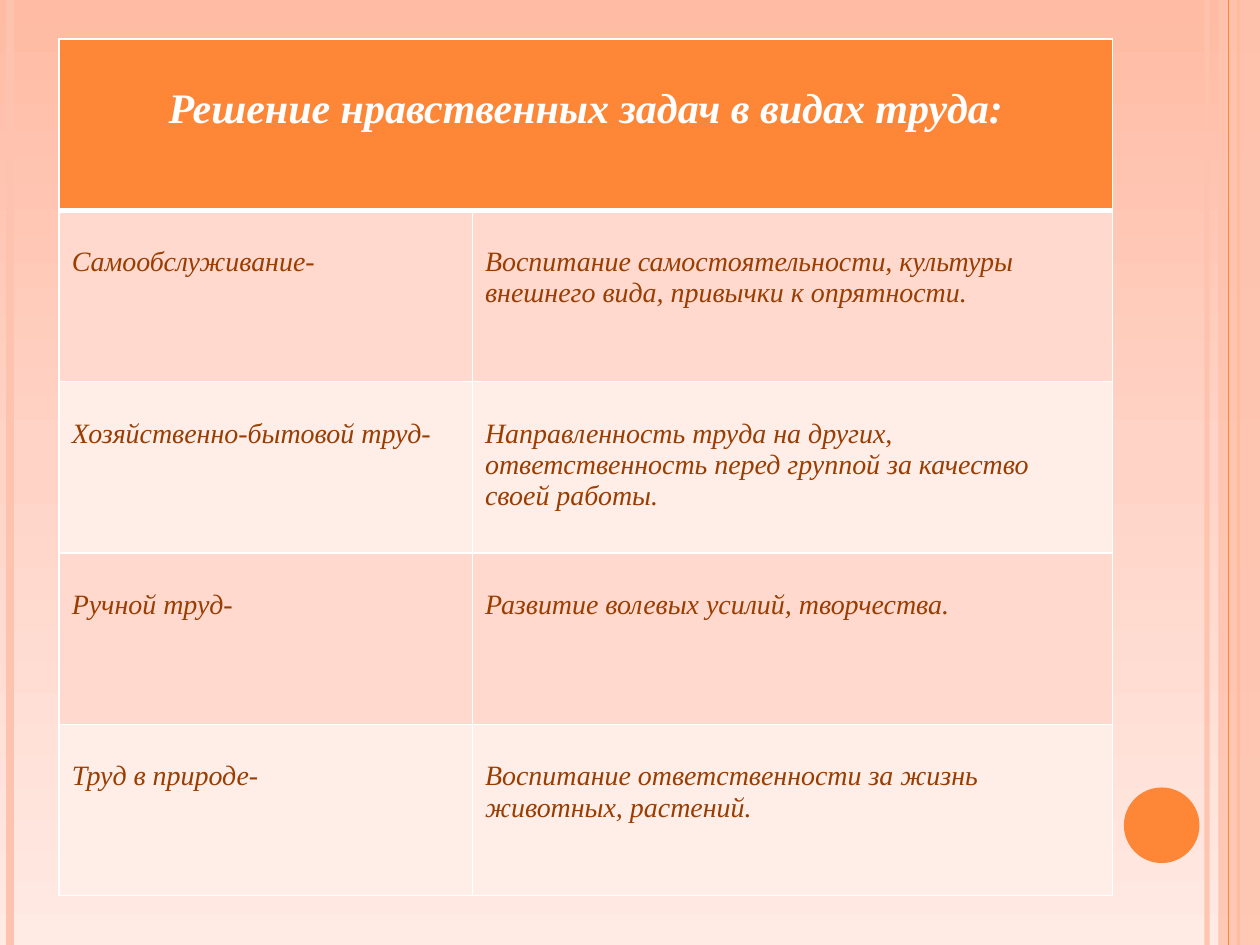
from copy import deepcopy

from lxml import etree
from pptx import Presentation
from pptx.dml.color import RGBColor
from pptx.enum import shapes, text
from pptx.oxml import ns
from pptx.util import Inches, Pt

ORANGE = RGBColor(0xFE, 0x86, 0x37)
PEACH = RGBColor(0xFE, 0xC3, 0xAE)
WHITE = RGBColor(0xFF, 0xFF, 0xFF)
BROWN = RGBColor(0x9A, 0x3D, 0x01)
ROW_FILLS = (RGBColor(0xFF, 0xD9, 0xCE), RGBColor(0xFF, 0xED, 0xE8))
SKY_TOP = RGBColor(0xFF, 0xBB, 0xA3)
SKY_MIDDLE = RGBColor(0xFF, 0xD4, 0xC7)
SKY_BOTTOM = RGBColor(0xFF, 0xEA, 0xE4)
FONT = "Times New Roman"

TITLE = "Решение нравственных задач в видах труда:"
LABOUR_TASKS = (
    ("Самообслуживание-",
     "Воспитание самостоятельности, культуры внешнего вида, привычки к опрятности."),
    ("Хозяйственно-бытовой труд-",
     "Направленность труда на других, ответственность перед группой за качество своей работы."),
    ("Ручной труд-", "Развитие волевых усилий, творчества."),
    ("Труд в природе-", "Воспитание ответственности за жизнь животных, растений."),
)


def set_alpha(element, percent):
    """Make the solid colour inside an element partly transparent."""
    color = element.find(".//" + ns.qn("a:srgbClr"))
    etree.SubElement(color, ns.qn("a:alpha"), val=str(percent * 1000))


def paint_background(slide):
    """Fill the slide with a three-stop vertical gradient."""
    fill = slide.background.fill
    fill.gradient()
    fill.gradient_angle = 270
    first, last = fill.gradient_stops
    first.color.rgb, last.color.rgb = SKY_MIDDLE, SKY_BOTTOM
    stops = slide.element.find(".//" + ns.qn("a:gsLst"))
    middle = deepcopy(stops[0])
    middle.set("pos", "50000")
    stops.insert(1, middle)
    first.color.rgb = SKY_TOP


def add_stripe(slide, x, height, color, width, alpha=None):
    """Draw a vertical line from the top of the slide."""
    line = slide.shapes.add_connector(
        shapes.MSO_CONNECTOR.STRAIGHT, Inches(x), 0, Inches(x), Inches(height))
    line.line.color.rgb = color
    line.line.width = Pt(width)
    properties = line.element.spPr
    if alpha:
        set_alpha(properties, alpha)
    etree.SubElement(properties, ns.qn("a:effectLst"))


def add_block(slide, kind, left, top, width, height, color):
    """Add a borderless filled shape."""
    shape = slide.shapes.add_shape(
        kind, Inches(left), Inches(top), Inches(width), Inches(height))
    shape.shadow.inherit = False
    shape.fill.solid()
    shape.fill.fore_color.rgb = color
    shape.line.fill.background()
    return shape


def add_frame(slide, width, height):
    """Place the side stripes and the disc along the slide edges."""
    add_stripe(slide, width - 0.42, height, PEACH, 3, 93)
    add_stripe(slide, 0.08, height, PEACH, 4.5)
    add_stripe(slide, width - 0.17, height, ORANGE, 1.5)
    band = add_block(slide, shapes.MSO_SHAPE.RECTANGLE,
                     width - 0.33, 0, 0.33, height, PEACH)
    set_alpha(band.element.spPr, 87)
    add_stripe(slide, width - 0.25, height, ORANGE, 0.75)
    add_block(slide, shapes.MSO_SHAPE.OVAL,
              width - 1.08, height - 1.25, 0.6, 0.6, ORANGE)


def set_borders(cell, widths):
    """Give a cell white borders, with widths by side."""
    properties = cell._tc.get_or_add_tcPr()
    for index, (side, width) in enumerate(widths.items()):
        line = etree.Element(ns.qn("a:ln" + side), w=str(Pt(width)))
        fill = etree.SubElement(line, ns.qn("a:solidFill"))
        etree.SubElement(fill, ns.qn("a:srgbClr"), val=str(WHITE))
        properties.insert(index, line)


def fill_cell(cell, words, fill, color, size, margin_top, bold=False):
    """Write and style one table cell."""
    cell.fill.solid()
    cell.fill.fore_color.rgb = fill
    cell.margin_top = Inches(margin_top)
    cell.text = words
    paragraph = cell.text_frame.paragraphs[0]
    font = paragraph.font
    font.name, font.size, font.color.rgb = FONT, Pt(size), color
    font.bold, font.italic = bold, True
    return paragraph


def add_task_table(slide, left, top, column_widths, row_height):
    """Build the table of labour types and their moral tasks."""
    row_count = len(LABOUR_TASKS) + 1
    table = slide.shapes.add_table(
        row_count, 2, Inches(left), Inches(top),
        Inches(sum(column_widths)), Inches(row_height * row_count)).table
    for column, width in zip(table.columns, column_widths):
        column.width = Inches(width)
    for row in table.rows:
        row.height = Inches(row_height)
    table.cell(0, 0).merge(table.cell(0, 1))
    heading = fill_cell(table.cell(0, 0), TITLE, ORANGE, WHITE, 24, 0.37, True)
    heading.alignment = text.PP_ALIGN.CENTER
    for row, tasks in enumerate(LABOUR_TASKS, 1):
        for column, words in enumerate(tasks):
            fill_cell(table.cell(row, column), words,
                      ROW_FILLS[(row - 1) % 2], BROWN, 16, 0.29)
    for row in range(row_count):
        for column in range(2):
            set_borders(table.cell(row, column), {
                "L": 1, "R": 1, "T": 3 if row == 1 else 1, "B": 3 if row == 0 else 1})


def main():
    """Create the presentation and save it."""
    presentation = Presentation()
    presentation.slide_width, presentation.slide_height = Inches(10), Inches(7.5)
    slide = presentation.slides.add_slide(presentation.slide_layouts[6])
    paint_background(slide)
    add_frame(slide, 10, 7.5)
    add_task_table(slide, 0.47, 0.31, (3.28, 5.08), 1.36)
    presentation.save("out.pptx")


if __name__ == "__main__":
    main()
